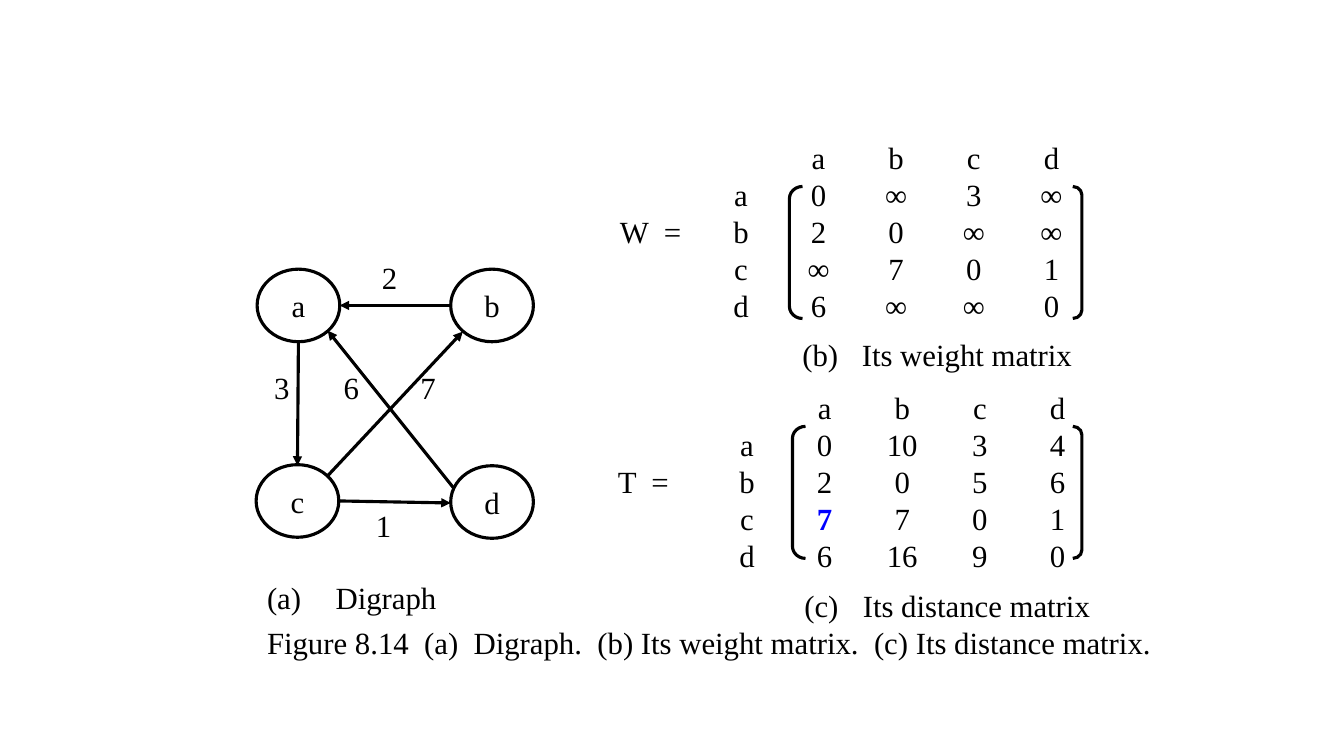
from lxml.etree import SubElement
from pptx import Presentation
from pptx.dml.color import RGBColor
from pptx.enum.shapes import MSO_CONNECTOR as Connector, MSO_SHAPE as Shape
from pptx.enum.text import MSO_ANCHOR as Anchor, PP_ALIGN as Align
from pptx.oxml.ns import qn
from pptx.util import Inches, Pt

BLACK = RGBColor(0, 0, 0)
WHITE = RGBColor(255, 255, 255)
BLUE = RGBColor(0, 0, 255)
FONT = {"name": "Times New Roman", "size": Pt(22), "bold": False}
LINE_WIDTH = Pt(2.25)
LABEL_HEIGHT = 0.47
COLUMN_STEP = 0.77
NAMES = "abcd"

NODES = {"a": (2.55, 2.67), "b": (4.47, 2.67), "c": (2.54, 4.61), "d": (4.47, 4.62)}
EDGES = [  # start, end
    ((3.36, 4.97), (4.47, 4.99)),
    ((4.73, 5.13), (3.25, 3.28)),
    ((4.48, 3.03), (3.37, 3.03)),
    ((2.96, 3.39), (2.95, 4.62)),
    ((3.11, 4.87), (4.59, 3.29)),
]
WEIGHTS = [("2", 3.69, 2.52), ("3", 2.62, 3.61), ("6", 3.31, 3.61),
           ("7", 4.07, 3.61), ("1", 3.63, 4.98)]
WEIGHT_MATRIX = ["0 ∞ 3 ∞", "2 0 ∞ ∞", "∞ 7 0 1", "6 ∞ ∞ 0"]
DISTANCE_MATRIX = ["0 10 3 4", "2 0 5 6", "7 7 0 1", "6 16 9 0"]


def add_run(paragraph, text, color=BLACK, **changes):
    run = paragraph.add_run()
    run.text = text
    for name, value in {**FONT, **changes}.items():
        setattr(run.font, name, value)
    run.font.color.rgb = color


def set_tabs(paragraph, stops):
    tab_list = SubElement(paragraph._p.get_or_add_pPr(), qn("a:tabLst"))
    for position, alignment in stops:
        SubElement(tab_list, qn("a:tab"), pos=str(Inches(position)), algn=alignment)


def add_text_frame(slide, left, top, width, height):
    box = slide.shapes.add_textbox(Inches(left), Inches(top), Inches(width), Inches(height))
    box.text_frame.word_wrap = True
    return box.text_frame


def add_label(slide, text, left, top, width=0.44, tab=None):
    paragraph = add_text_frame(slide, left, top, width, LABEL_HEIGHT).paragraphs[0]
    if tab:
        set_tabs(paragraph, [(tab, "l")])
    add_run(paragraph, text)


def add_outline(slide, kind, left, top, width, height):
    shape = slide.shapes.add_shape(kind, Inches(left), Inches(top), Inches(width), Inches(height))
    shape.shadow.inherit = False
    shape.line.color.rgb = BLACK
    shape.line.width = LINE_WIDTH
    return shape


def add_node(slide, name, left, top):
    node = add_outline(slide, Shape.OVAL, left, top, 0.82, 0.72)
    node.fill.solid()
    node.fill.fore_color.rgb = WHITE
    frame = node.text_frame
    frame.vertical_anchor = Anchor.MIDDLE
    frame.margin_left = frame.margin_right = frame.margin_top = frame.margin_bottom = 0
    frame.paragraphs[0].alignment = Align.CENTER
    add_run(frame.paragraphs[0], name)


def add_edge(slide, start, end):
    points = [Inches(value) for value in (*start, *end)]
    edge = slide.shapes.add_connector(Connector.STRAIGHT, *points)
    edge.line.color.rgb = BLACK
    edge.line.width = LINE_WIDTH
    SubElement(edge.line._get_or_add_ln(), qn("a:tailEnd"), type="triangle")
    SubElement(edge._element.spPr, qn("a:effectLst"))


def add_bracket(slide, kind, left, top, width):
    bracket = add_outline(slide, kind, left, top, width, 1.31)
    bracket.fill.background()
    bracket.adjustments[0] = 0.927


def add_matrix(slide, name, rows, left, top, first_stop, bracket, highlight=None):
    """Header and rows in one text box; tab stops centre the columns."""
    frame = add_text_frame(slide, left, top, 6.55, 1.95)
    stops = [(0.47, "l")]
    stops += [(first_stop + COLUMN_STEP * column, "ctr") for column in range(5)]
    lines = [["", "", *NAMES]]
    for row_name, row in zip(NAMES, rows):
        lines.append([name if row_name == "b" else "", row_name, *row.split()])
    for number, cells in enumerate(lines):
        paragraph = frame.add_paragraph() if number else frame.paragraphs[0]
        set_tabs(paragraph, stops)
        if highlight and highlight[0] == number:
            column = highlight[1]
            add_run(paragraph, "\t" + "\t".join(cells[:column]) + "\t")
            add_run(paragraph, cells[column], BLUE, bold=True)
            add_run(paragraph, "\t" + "\t".join(cells[column + 1:]))
        else:
            add_run(paragraph, "\t" + "\t".join(cells))
    bracket_left, bracket_top = bracket
    add_bracket(slide, Shape.LEFT_BRACKET, bracket_left, bracket_top, 0.13)
    add_bracket(slide, Shape.RIGHT_BRACKET, 10.64, bracket_top, 0.09)


def main():
    presentation = Presentation()
    presentation.slide_width = Inches(13.33)
    presentation.slide_height = Inches(7.5)
    slide = presentation.slides.add_slide(presentation.slide_layouts[6])

    # Digraph: edges lie behind the nodes
    for start, end in EDGES:
        add_edge(slide, start, end)
    for name, (left, top) in NODES.items():
        add_node(slide, name, left, top)
    for weight, left, top in WEIGHTS:
        add_label(slide, weight, left, top)

    # Matrices
    add_matrix(slide, "W  =", WEIGHT_MATRIX, 5.58, 1.33, 1.67, (7.83, 1.85))
    add_matrix(slide, "T  =", DISTANCE_MATRIX, 5.56, 3.81, 1.75, (7.86, 4.23),
               highlight=(3, 2))

    # Captions
    add_label(slide, "(a)\tDigraph", 2.55, 5.69, 1.98, tab=0.68)
    add_label(slide, "(b)\tIts weight matrix", 7.86, 3.28, 3.06, tab=0.59)
    add_label(slide, "(c)\tIts distance matrix", 7.88, 5.77, 3.3, tab=0.58)
    add_label(slide, "Figure 8.14  (a)  Digraph.  (b) Its weight matrix.  (c) Its distance matrix.",
              2.55, 6.14, 9.35)

    presentation.save("out.pptx")


if __name__ == "__main__":
    main()
